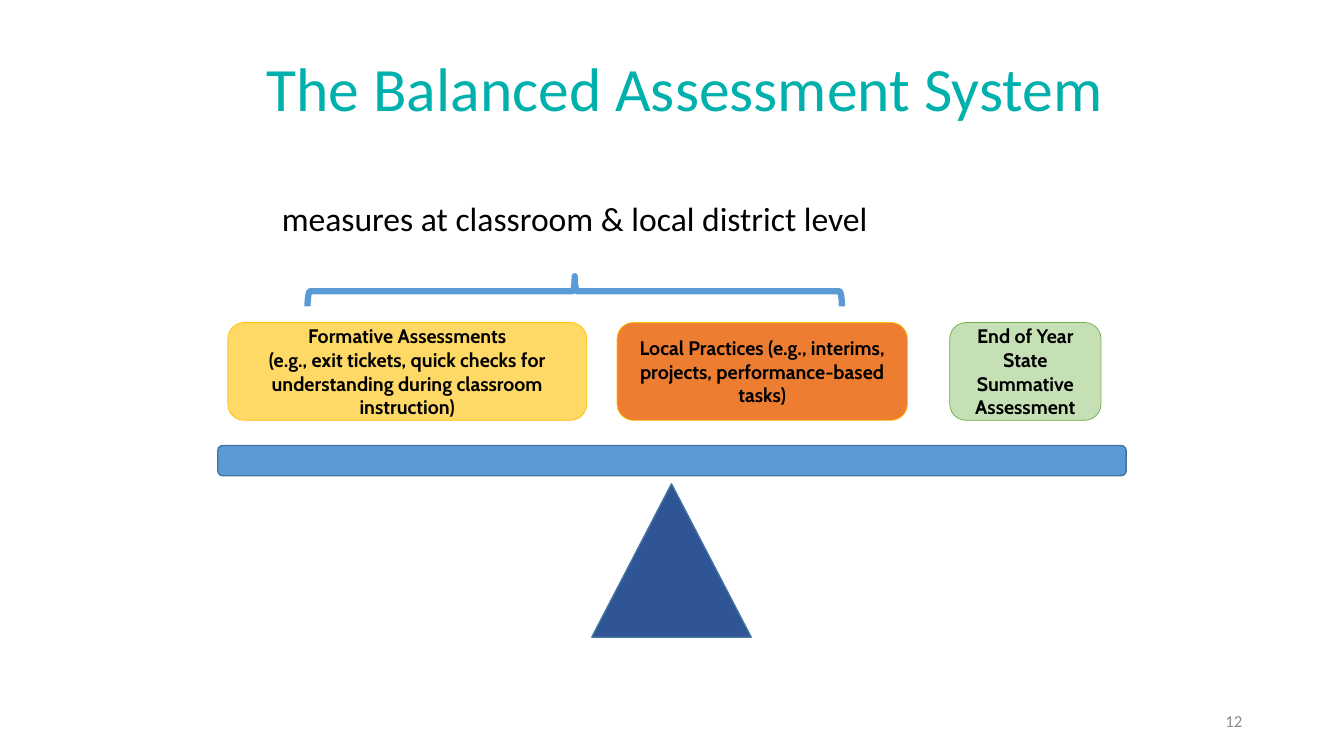
import pptx
import pptx.dml.color
import pptx.enum.shapes
import pptx.enum.text
import pptx.util

SHAPE = pptx.enum.shapes.MSO_SHAPE
ALIGN = pptx.enum.text.PP_ALIGN
ANCHOR = pptx.enum.text.MSO_ANCHOR

COLORS = {
    "teal": "00B0AC", "black": "000000", "gray": "8C8C8C",
    "navy": "2F5597", "blue": "5B9BD5", "edge": "43739E",
    "yellow": "FFD966", "gold": "FFC000", "orange": "ED7D31",
    "mint": "C5E0B4", "green": "70AD47",
}


def rgb(name):
    return pptx.dml.color.RGBColor.from_string(COLORS[name])


class BalanceSlide:
    """Places elements on a grid whose columns and rows are a tenth of an inch."""

    CELL = 0.1
    BODY_FONT = "Calibri"
    LABEL_FONT = "Cabin"

    def __init__(self, deck):
        self.slide = deck.slides.add_slide(deck.slide_layouts[6])

    def grid(self, *cells):
        return [pptx.util.Inches(cell * self.CELL) for cell in cells]

    def set_wording(self, frame, wording, font, size, color, align=ALIGN.CENTER,
                    anchor=ANCHOR.TOP, bold=False, spacing=None):
        frame.word_wrap = True
        frame.vertical_anchor = anchor
        frame.text = wording
        for paragraph in frame.paragraphs:
            paragraph.alignment = align
            paragraph.line_spacing = spacing
            for run in paragraph.runs:
                run.font.name = font
                run.font.size = pptx.util.Pt(size)
                run.font.bold = bold
                run.font.color.rgb = rgb(color)

    def text(self, area, wording, size, color, **style):
        box = self.slide.shapes.add_textbox(*self.grid(*area))
        self.set_wording(box.text_frame, wording, self.BODY_FONT, size, color, **style)

    def block(self, preset, area, fill, line, weight=1):
        block = self.slide.shapes.add_shape(preset, *self.grid(*area))
        block.shadow.inherit = False
        if fill:
            block.fill.solid()
            block.fill.fore_color.rgb = rgb(fill)
        else:
            block.fill.background()
        block.line.color.rgb = rgb(line)
        block.line.width = pptx.util.Pt(weight)
        return block

    def assessment(self, left, width, wording, fill, line):
        """Rounded, labelled weight resting above the beam."""
        weight = self.block(SHAPE.ROUNDED_RECTANGLE, (left, 32, width, 9.7),
                            fill, line, 0.5)
        self.set_wording(weight.text_frame, wording, self.LABEL_FONT, 14, "black",
                         anchor=ANCHOR.MIDDLE, bold=True)

    def brace_above(self, left, top, width, height):
        """Brace spanning the given area with its point upwards."""
        upright = (left + (width - height) / 2, top + (height - width) / 2,
                   height, width)
        brace = self.block(SHAPE.LEFT_BRACE, upright, None, "blue", 4.5)
        brace.rotation = 90


def main():
    deck = pptx.Presentation()
    deck.slide_width = pptx.util.Inches(13.33)
    deck.slide_height = pptx.util.Inches(7.5)
    balance = BalanceSlide(deck)

    balance.text((94.2, 69.5, 30, 4), "12", 12, "gray",
                 align=ALIGN.RIGHT, anchor=ANCHOR.MIDDLE)
    balance.text((9.1, 5.3, 117.7, 6.4), "The Balanced Assessment System",
                 44, "teal", spacing=0.9)

    balance.block(SHAPE.ISOSCELES_TRIANGLE, (58.7, 48, 15.8, 15.2), "navy", "edge")
    balance.block(SHAPE.ROUNDED_RECTANGLE, (21.6, 44.2, 90.1, 3), "blue", "edge")

    assessments = [
        (22.6, 35.6, "Formative Assessments\n(e.g., exit tickets, quick checks for "
         "understanding during classroom instruction)", "yellow", "gold"),
        (61.2, 28.8, "Local Practices (e.g., interims, projects, "
         "performance-based tasks)", "orange", "gold"),
        (94.2, 15, "End of Year State Summative Assessment", "mint", "green"),
    ]
    for assessment in assessments:
        balance.assessment(*assessment)

    balance.text((19.9, 19.1, 74.2, 5),
                 "measures at classroom & local district level", 24, "black")
    balance.brace_above(30.5, 27.4, 53, 3)

    deck.save("out.pptx")


if __name__ == "__main__":
    main()
